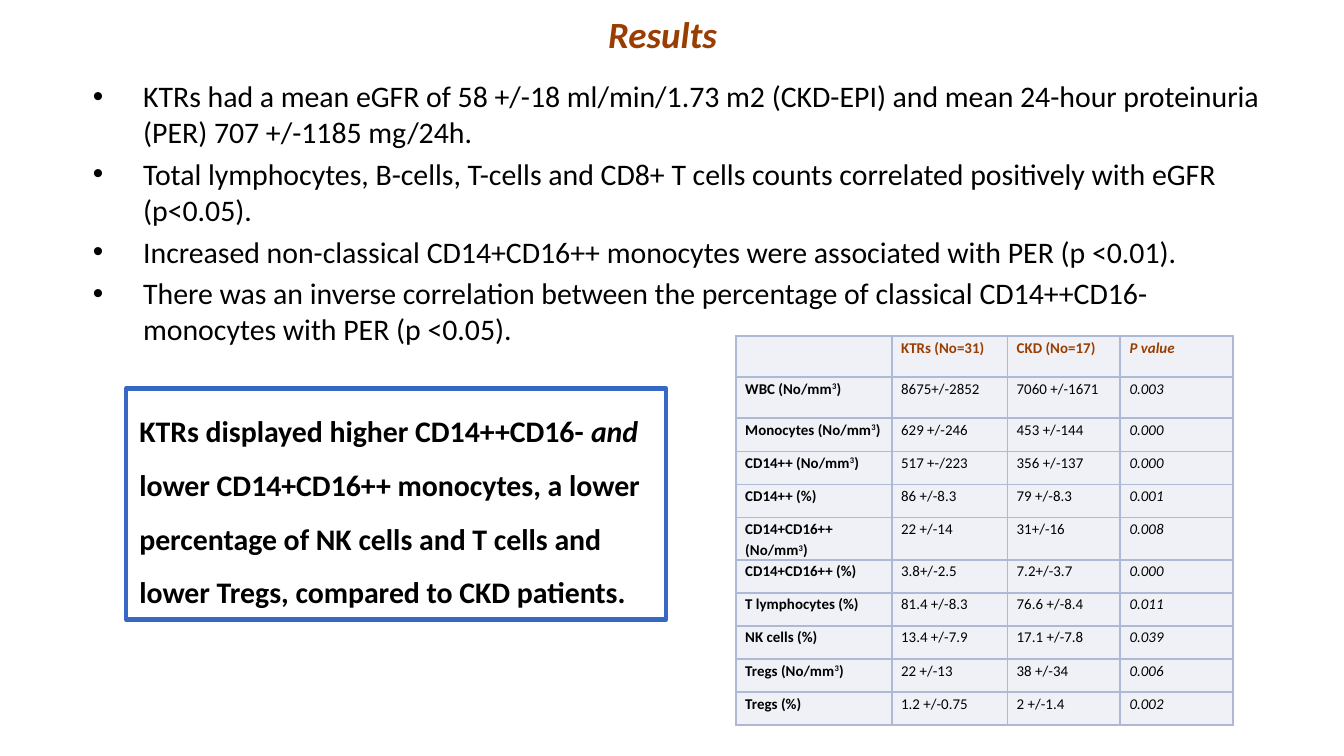
from typing import NamedTuple

from lxml.etree import SubElement as Sub
from pptx import Presentation
from pptx.dml.color import RGBColor as Rgb
from pptx.enum.shapes import MSO_SHAPE as Kind
from pptx.enum.text import MSO_ANCHOR as Anchor, MSO_AUTO_SIZE as Fit, PP_ALIGN as Align
from pptx.oxml.ns import qn
from pptx.util import Inches, Pt

WIDE = Inches(10)
HIGH = WIDE * 9 // 16
RUST, BLACK, BLUE, PALE, EDGE = "9A3D01", "000000", "3668C4", "EFF1F7", "AEBAD5"


class Area(NamedTuple):
    """A place in percent of the slide's width and height."""
    left: float
    top: float
    width: float
    height: float


class Style(NamedTuple):
    size: float
    color: str = BLACK
    bold: bool = False
    italic: bool = False


class Row(NamedTuple):
    label: str
    ktr: str
    ckd: str
    p: str
    high: float = 4.38


TITLE = Area(4.3, 1, 90, 6.94)
BODY = Area(5.9, 9.42, 90, 36.45)
GRID = Area(54.75, 44.44, 37, 51.4)
BOX = Area(9.38, 51.38, 40.2, 30.58)
COLS = (11.6, 8.6, 8.4, 8.4)
TALL = 5.45

POINTS = (
    "KTRs had a mean eGFR of 58 +/-18 ml/min/1.73 m2 (CKD-EPI) and mean 24-hour proteinuria (PER) 707 +/-1185 mg/24h.",
    "Total lymphocytes, B-cells, T-cells and CD8+ T cells counts correlated positively with eGFR (p<0.05).",
    "Increased non-classical CD14+CD16++ monocytes were associated with PER (p <0.01).",
    "There was an inverse correlation between the percentage of classical CD14++CD16- monocytes with PER (p <0.05).",
)
# Text between bars is raised in the table and italic in the box.
ROWS = (
    Row("", "KTRs (No=31)", "CKD (No=17)", "P value", TALL),
    Row("WBC (No/mm|3|)", "8675+/-2852", "7060 +/-1671", "0.003", TALL),
    Row("Monocytes (No/mm|3|)", "629 +/-246", "453 +/-144", "0.000"),
    Row("CD14++ (No/mm|3|)", "517 +-/223", "356 +/-137", "0.000"),
    Row("CD14++ (%)", "86 +/-8.3", "79 +/-8.3", "0.001"),
    Row("CD14+CD16++ (No/mm|3|)", "22 +/-14", "31+/-16", "0.008", TALL),
    Row("CD14+CD16++ (%)", "3.8+/-2.5", "7.2+/-3.7", "0.000"),
    Row("T lymphocytes (%)", "81.4 +/-8.3", "76.6 +/-8.4", "0.011"),
    Row("NK cells (%)", "13.4 +/-7.9", "17.1 +/-7.8", "0.039"),
    Row("Tregs (No/mm|3|)", "22 +/-13", "38 +/-34", "0.006"),
    Row("Tregs (%)", "1.2 +/-0.75", "2 +/-1.4", "0.002"),
)
NOTE = ("KTRs displayed higher CD14++CD16- |and| lower CD14+CD16++ monocytes, a lower "
        "percentage of NK cells and T cells and lower Tregs, compared to CKD patients.")


def tint(code: str) -> Rgb:
    return Rgb.from_string(code)


def across(share: float) -> int:
    return round(WIDE * share / 100)


def down(share: float) -> int:
    return round(HIGH * share / 100)


def spot(area: Area) -> tuple[int, int, int, int]:
    return across(area.left), down(area.top), across(area.width), down(area.height)


def assign(item, **values) -> None:
    for name, value in values.items():
        setattr(item, name, value)


def place(item, area: Area) -> None:
    assign(item, **dict(zip(("left", "top", "width", "height"), spot(area))))


def write(para, text: str, style: Style, **marks: str) -> None:
    """Add runs, giving the parts between bars the extra run attributes."""
    for i, part in enumerate(text.split("|")):
        run = para.add_run()
        run.text = part
        assign(run.font, name="Calibri", size=Pt(style.size), bold=style.bold, italic=style.italic)
        run.font.color.rgb = tint(style.color)
        if i % 2:
            for name, value in marks.items():
                run._r.get_or_add_rPr().set(name, value)


def edge(cell) -> None:
    props = cell._tc.get_or_add_tcPr()
    for side in "LRTB":
        line = Sub(props, qn(f"a:ln{side}"), w=str(Pt(1)))
        Sub(Sub(line, qn("a:solidFill")), qn("a:srgbClr"), val=EDGE)


def fill_cell(cell, text: str, style: Style) -> None:
    edge(cell)
    cell.fill.solid()
    cell.fill.fore_color.rgb = tint(PALE)
    assign(cell, margin_left=Inches(0.07), margin_right=Inches(0.07), margin_top=0, margin_bottom=0)
    para = cell.text_frame.paragraphs[0]
    assign(para, line_spacing=1.15, space_after=Pt(10))
    if text:
        write(para, text, style, baseline="30000")
    else:
        Sub(para._p, qn("a:endParaRPr"), sz=str(style.size * 100))


def add_grid(slide) -> None:
    table = slide.shapes.add_table(len(ROWS), len(COLS), *spot(GRID)).table
    for col, share in zip(table.columns, COLS):
        col.width = across(share)
    for r, row in enumerate(ROWS):
        table.rows[r].height = down(row.high)
        for c, text in enumerate(row[:len(COLS)]):
            style = Style(8, BLACK if r else RUST, r == 0 or c == 0, c == 3)
            fill_cell(table.cell(r, c), text, style)


def add_box(slide) -> None:
    box = slide.shapes.add_shape(Kind.RECTANGLE, *spot(BOX))
    box.shadow.inherit = False
    box.fill.background()
    box.line.color.rgb = tint(BLUE)
    box.line.width = Pt(2.25)
    frame = box.text_frame
    assign(frame, word_wrap=True, auto_size=Fit.SHAPE_TO_FIT_TEXT, vertical_anchor=Anchor.TOP)
    para = frame.paragraphs[0]
    assign(para, alignment=Align.LEFT, line_spacing=1.5)
    write(para, NOTE, Style(16, bold=True), i="1")


def add_heads(slide) -> None:
    title, body = slide.placeholders
    place(title, TITLE)
    place(body, BODY)
    for item in (title, body):
        item.text_frame.auto_size = Fit.NONE
    write(title.text_frame.paragraphs[0], "Results", Style(19.8, RUST, True, True))
    frame = body.text_frame
    for i, text in enumerate(POINTS):
        para = frame.add_paragraph() if i else frame.paragraphs[0]
        write(para, text, Style(16))


def main() -> None:
    deck = Presentation()
    assign(deck, slide_width=WIDE, slide_height=HIGH)
    slide = deck.slides.add_slide(deck.slide_layouts[1])
    add_heads(slide)
    add_grid(slide)
    add_box(slide)
    deck.save("out.pptx")


if __name__ == "__main__":
    main()
